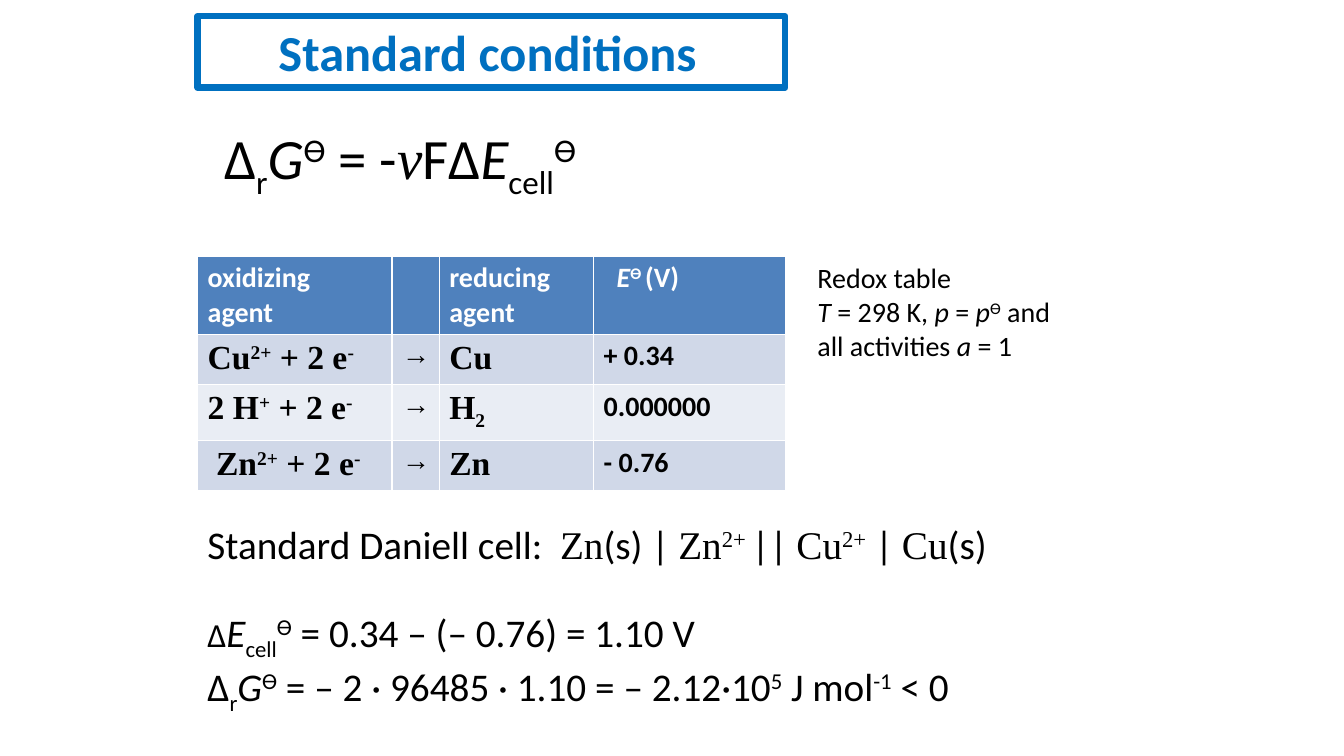
from pptx import Presentation
from pptx.dml.color import RGBColor
from pptx.enum.shapes import MSO_SHAPE
from pptx.enum.text import MSO_ANCHOR, MSO_AUTO_SIZE, PP_ALIGN
from pptx.util import Cm, Pt

BLUE, BLACK, WHITE = "0070C0", "000000", "FFFFFF"
HEADER, BAND_DARK, BAND_LIGHT = "4F81BD", "D0D8E8", "E9EDF4"
# Each mark switches its style on and off inside a text
MARKS = {"_": "sub", "^": "sup", "*": "italic", "~": "times"}
BASELINES = {"sub": "-25000", "sup": "30000"}


def rgb(value):
    return RGBColor.from_string(value)


def split_runs(text):
    """Yield (text, active styles) for every run of a marked text."""
    active, piece = set(), ""
    for ch in text:
        if ch not in MARKS:
            piece += ch
            continue
        if piece:
            yield piece, set(active)
        piece = ""
        active ^= {MARKS[ch]}
    if piece:
        yield piece, active


class Deck:
    def __init__(self, width, height):
        self.prs = Presentation()
        self.prs.slide_width, self.prs.slide_height = Cm(width), Cm(height)
        self.font, self.symbol_font = "Calibri", "Times New Roman"

    def add_slide(self):
        self.slide = self.prs.slides.add_slide(self.prs.slide_layouts[5])

    def fill_text(self, tf, lines, size, color=BLACK, bold=False,
                  align=PP_ALIGN.LEFT):
        for i, line in enumerate(lines):
            p = tf.paragraphs[0] if i == 0 else tf.add_paragraph()
            p.alignment = align
            for text, styles in split_runs(line):
                r = p.add_run()
                r.text = text
                r.font.name = self.symbol_font if "times" in styles else self.font
                r.font.size, r.font.bold = Pt(size), bold
                r.font.italic = "italic" in styles
                r.font.color.rgb = rgb(color)
                for name in styles & set(BASELINES):
                    r._r.get_or_add_rPr().set("baseline", BASELINES[name])

    def title(self, text, left, top, width, height, size, color):
        sp = self.slide.shapes.title
        sp.left, sp.top, sp.width, sp.height = map(Cm, (left, top, width, height))
        tf = sp.text_frame
        tf.word_wrap, tf.auto_size = True, MSO_AUTO_SIZE.NONE
        tf.vertical_anchor = MSO_ANCHOR.TOP
        self.fill_text(tf, [text], size, color, True, PP_ALIGN.CENTER)

    def frame(self, left, top, width, height, color, weight):
        sp = self.slide.shapes.add_shape(
            MSO_SHAPE.RECTANGLE, *map(Cm, (left, top, width, height)))
        sp.shadow.inherit = False
        sp.fill.background()
        sp.line.color.rgb, sp.line.width = rgb(color), Pt(weight)

    def text(self, lines, left, top, width, height, size,
             align=PP_ALIGN.LEFT, anchor=MSO_ANCHOR.TOP):
        sp = self.slide.shapes.add_textbox(*map(Cm, (left, top, width, height)))
        tf = sp.text_frame
        tf.word_wrap, tf.vertical_anchor = True, anchor
        self.fill_text(tf, lines, size, align=align)
        return sp

    def table(self, rows, left, top, widths, heights, fills):
        table = self.slide.shapes.add_table(
            len(rows), len(widths),
            *map(Cm, (left, top, sum(widths), sum(heights)))).table
        for column, width in zip(table.columns, widths):
            column.width = Cm(width)
        for i, (row, height, fill) in enumerate(zip(rows, heights, fills)):
            table.rows[i].height = Cm(height)
            for j, text in enumerate(row):
                cell = table.cell(i, j)
                cell.fill.solid()
                cell.fill.fore_color.rgb = rgb(fill)
                size = 24 if i and j in (0, 2) else 20
                color = BLACK if i else WHITE
                self.fill_text(cell.text_frame, text.split("\n"), size, color, True)
        return table


def main():
    deck = Deck(33.87, 19.05)
    deck.add_slide()
    left = 4.98

    # Framed title
    deck.title("Standard conditions ", 5.54, 0.41, 13.79, 1.8, 36, BLUE)
    deck.frame(left, 0.41, 14.81, 1.8, BLUE, 4.5)

    # Gibbs energy formula
    deck.text(["∆_r_*G*^Ɵ^ = -~*ν*~F∆*E*_cell_^Ɵ ^"], left, 2.49, 10.39, 3.18,
              40.7, PP_ALIGN.CENTER, MSO_ANCHOR.MIDDLE)

    # Redox table and its conditions
    rows = [
        ("oxidizing agent", "", "reducing\nagent", "*E*^Ɵ ^(V)"),
        ("~Cu^2+^ + 2 e^-^~", "~→~", "~Cu~", "+ 0.34"),
        ("~2 H^+^ + 2 e^-^~", "~→~", "~H_2_~", "0.000000"),
        ("~ Zn^2+^ + 2 e^-^~", "~→~", "~Zn~", "- 0.76"),
    ]
    redox = deck.table(rows, left, 6.45, (4.9, 1.19, 3.89, 4.83),
                       (1.97, 1.19, 1.35, 1.19),
                       (HEADER, BAND_DARK, BAND_LIGHT, BAND_DARK))
    redox.cell(0, 3).margin_left = Cm(0.58)
    deck.text(["Redox table", "*T *= 298 K, *p* = *p*^Ɵ^ and",
               "all activities *a* = 1"], 20.35, 6.45, 8, 2.82, 20)

    # Daniell cell notation
    deck.text(["Standard Daniell cell:  ~Zn~(s) | ~Zn^2+ ^~|| ~Cu^2+^~ | ~Cu~(s)"],
              left, 12.98, 21.41, 1.45, 28)

    # Cell potential and Gibbs energy
    results = deck.text(["∆*E*_cell_^Ɵ^ = 0.34 – (– 0.76) = 1.10 V",
                         "∆_r_*G*^Ɵ^ = – 2 · 96485 · 1.10 = – 2.12·10^5^ J mol^-1^ < 0"],
                        left, 15.21, 19.99, 2.64, 28)
    results.text_frame.paragraphs[0].runs[0].font.size = Pt(24)

    deck.prs.save("out.pptx")


if __name__ == "__main__":
    main()
